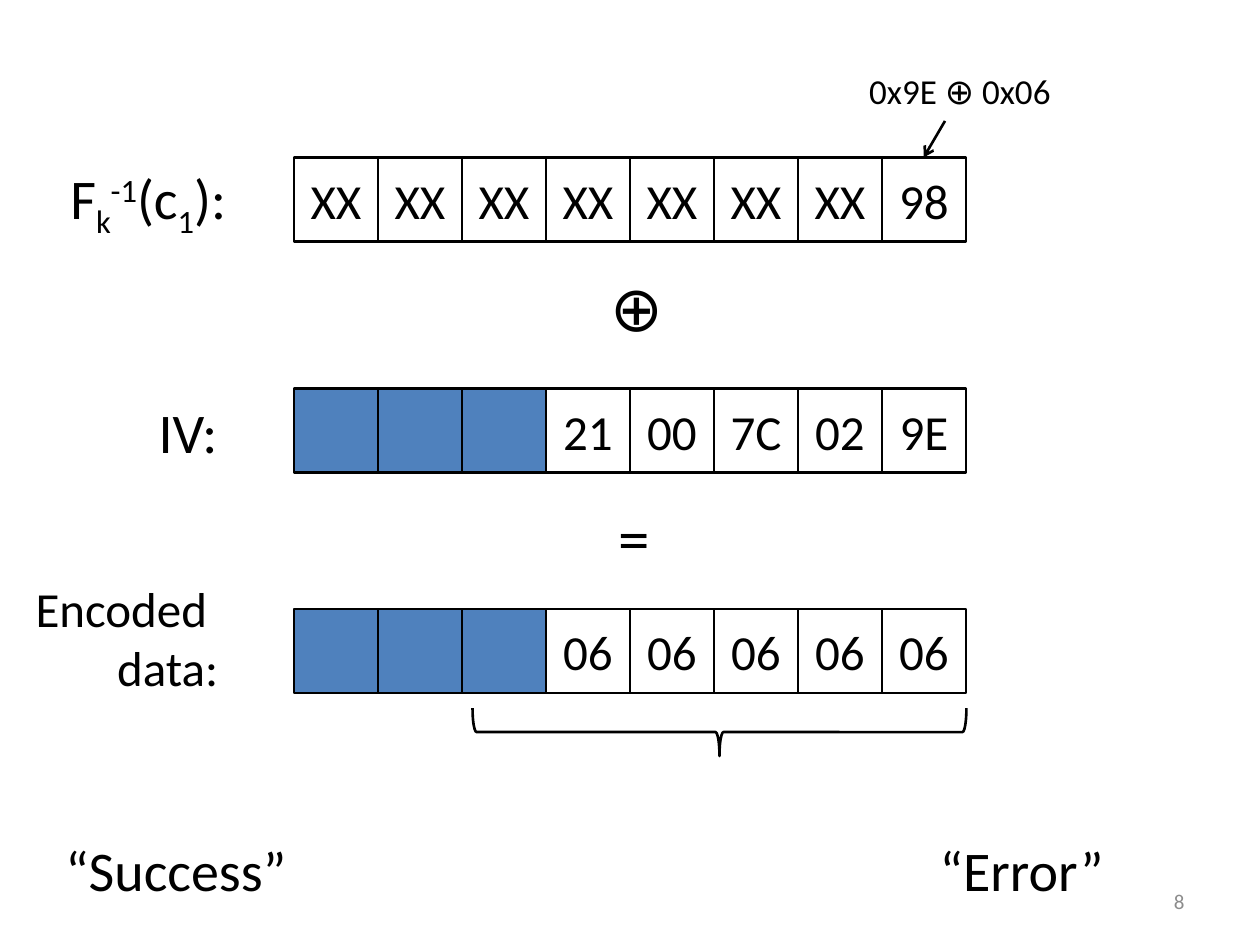
from lxml.etree import SubElement
from pptx import Presentation
from pptx.dml.color import RGBColor
from pptx.enum.shapes import MSO_CONNECTOR, MSO_SHAPE
from pptx.enum.text import MSO_ANCHOR, MSO_AUTO_SIZE, PP_ALIGN
from pptx.oxml.ns import qn
from pptx.util import Inches, Pt

COLORS = {"ink": "000000", "paper": "FFFFFF", "hidden": "4F81BD", "number": "8C8C8C"}
FONT = "Calibri"
LINE_WIDTH = Pt(1.5)
CELL = 2 / 3
ROW_LEFT = 7 / 3
SUBSCRIPT, SUPERSCRIPT = -25, 30

# Top, then groups of (fill, values); a fill of None leaves the cell open
BYTE_ROWS = [
    (1.25, [(None, ["XX"] * 7), ("paper", ["98"])]),
    (37 / 12, [("hidden", [""] * 3), (None, ["21", "00", "7C", "02", "9E"])]),
    (29 / 6, [("hidden", [""] * 3), ("paper", ["06"] * 5)]),
]

# Position and size, font size, text
LABELS = [
    ((1.16, 3.11, 0.68, 0.64), 32, "IV:"),
    ((4.75, 2.08, 0.59, 0.71), 36, "⊕"),
    ((4.81, 3.91, 0.45, 0.71), 36, "="),
    ((0.42, 6.58, 1.97, 0.64), 32, "“Success”"),
    ((7.36, 6.58, 1.51, 0.64), 32, "“Error”"),
    ((6.8, 0.5, 1.7, 0.44), 20, "0x9E ⊕ 0x06"),
]


def color(name):
    return RGBColor.from_string(COLORS[name])


def add_span(para, text, size, ink="ink", baseline=0):
    """Add a run; baseline is a raise or drop in percent."""
    span = para.add_run()
    span.text = text
    span.font.name = FONT
    span.font.size = Pt(size)
    span.font.color.rgb = color(ink)
    if baseline:
        span.font._element.set("baseline", str(baseline * 1000))


def draw_outline(shape):
    shape.line.color.rgb = color("ink")
    shape.line.width = LINE_WIDTH


def set_fill(shape, name):
    if name is None:
        shape.fill.background()
    else:
        shape.fill.solid()
        shape.fill.fore_color.rgb = color(name)


def add_byte_row(page, top, groups):
    cells = [(fill, value) for fill, values in groups for value in values]
    for column, (fill, value) in enumerate(cells):
        left = ROW_LEFT + column * CELL
        cell = page.shapes.add_shape(
            MSO_SHAPE.RECTANGLE, Inches(left), Inches(top), Inches(CELL), Inches(CELL))
        cell.shadow.inherit = False
        set_fill(cell, fill)
        draw_outline(cell)
        if value:
            cell.text_frame.vertical_anchor = MSO_ANCHOR.MIDDLE
            para = cell.text_frame.paragraphs[0]
            para.alignment = PP_ALIGN.CENTER
            add_span(para, value, 28)


def add_label(page, frame, align=PP_ALIGN.LEFT):
    """Add an unwrapped text box and return its empty paragraph."""
    box = page.shapes.add_textbox(*map(Inches, frame))
    box.text_frame.word_wrap = False
    box.text_frame.auto_size = MSO_AUTO_SIZE.SHAPE_TO_FIT_TEXT
    para = box.text_frame.paragraphs[0]
    para.alignment = align
    return para


def add_inverse_label(page):
    para = add_label(page, (0.46, 1.25, 1.53, 0.64))
    for text, baseline in [("F", 0), ("k", SUBSCRIPT), ("-1", SUPERSCRIPT),
                           ("(c", 0), ("1", SUBSCRIPT), ("):", 0)]:
        add_span(para, text, 32, baseline=baseline)


def add_encoded_label(page):
    para = add_label(page, (0.16, 4.54, 1.67, 1.04), PP_ALIGN.RIGHT)
    add_span(para, "Encoded ", 28)
    para.add_line_break()
    add_span(para, "data:", 28)


def add_padding_brace(page):
    brace = page.shapes.add_shape(
        MSO_SHAPE.RIGHT_BRACE, Inches(5.52), Inches(3.85), Inches(0.38), Inches(3.92))
    brace.rotation = 90
    brace.shadow.inherit = False
    set_fill(brace, None)
    draw_outline(brace)


def add_arrow(page, start, end):
    arrow = page.shapes.add_connector(
        MSO_CONNECTOR.STRAIGHT, *map(Inches, start + end))
    draw_outline(arrow)
    SubElement(arrow.line._get_or_add_ln(), qn("a:tailEnd"), type="arrow")
    SubElement(arrow._element.spPr, qn("a:effectLst"))


def add_page_number(page, number):
    box = page.shapes.add_textbox(Inches(7.17), Inches(6.95), Inches(2.33), Inches(0.4))
    box.text_frame.word_wrap = True
    box.text_frame.vertical_anchor = MSO_ANCHOR.MIDDLE
    para = box.text_frame.paragraphs[0]
    para.alignment = PP_ALIGN.RIGHT
    add_span(para, number, 12, "number")


def main():
    deck = Presentation()
    deck.slide_width, deck.slide_height = Inches(10), Inches(7.5)
    page = deck.slides.add_slide(deck.slide_layouts[6])

    for top, groups in BYTE_ROWS:
        add_byte_row(page, top, groups)
    add_inverse_label(page)
    add_encoded_label(page)
    for frame, size, text in LABELS:
        add_span(add_label(page, frame), text, size)
    add_padding_brace(page)
    add_arrow(page, (7.5, 0.96), (7.33, 1.25))
    add_page_number(page, "8")

    deck.save("out.pptx")


if __name__ == "__main__":
    main()
